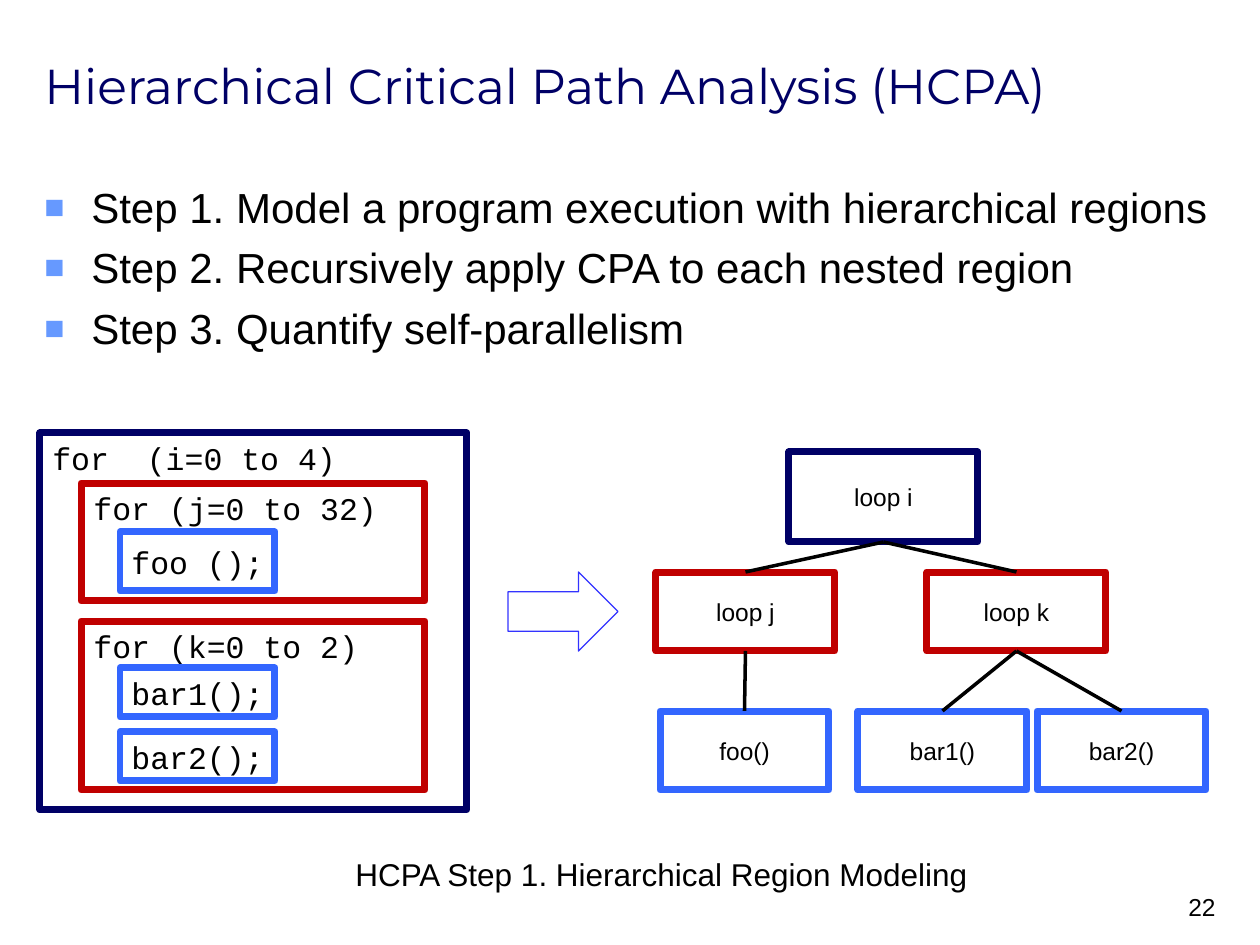
from dataclasses import dataclass

from lxml.etree import SubElement
from pptx import Presentation
from pptx.dml.color import RGBColor
from pptx.enum.shapes import MSO_CONNECTOR as Connector, MSO_SHAPE as Shape
from pptx.enum.text import MSO_ANCHOR as Anchor, PP_ALIGN as Align
from pptx.oxml.ns import qn
from pptx.util import Emu, Pt

PX = 914400 / 126
BOTTOM, TOP = 2, 0


def px(length):
    return Emu(round(length * PX))


@dataclass(frozen=True)
class Theme:
    navy: str = "000066"
    red: str = "C00000"
    blue: str = "3366FF"
    arrow: str = "3333FF"
    bullet: str = "6699FF"
    ink: str = "000000"
    heading_font: str = "Montserrat"
    body_font: str = "Arial"
    code_font: str = "Courier New"
    heading: int = 28
    body: int = 24
    code: int = 18
    small: int = 14
    border: float = 4
    edge: float = 2
    hairline: float = 0.75


def add_bullet(paragraph, color, indent):
    props = paragraph._p.get_or_add_pPr()
    props.set("marL", str(indent))
    props.set("indent", str(-indent))
    bullet_color = SubElement(props, qn("a:buClr"))
    SubElement(bullet_color, qn("a:srgbClr"), val=color)
    SubElement(props, qn("a:buSzPct"), val="80000")
    SubElement(props, qn("a:buFont"), typeface="Arial")
    SubElement(props, qn("a:buChar"), char="■")


def write(frame, text, *, font, size, color, align=Align.LEFT,
          anchor=Anchor.TOP, wrap=True, space=0, bullet=None):
    """Fill a text frame, one paragraph for each line of text."""
    frame.word_wrap = wrap
    frame.vertical_anchor = anchor
    for i, line in enumerate(text.split("\n")):
        paragraph = frame.add_paragraph() if i else frame.paragraphs[0]
        paragraph.alignment = align
        paragraph.space_before = Pt(space)
        if bullet:
            add_bullet(paragraph, bullet, px(47))
        run = paragraph.add_run()
        run.text = line
        run.font.name = font
        run.font.size = Pt(size)
        run.font.color.rgb = RGBColor.from_string(color)


class SlideBuilder:
    def __init__(self, slide, theme):
        self.shapes = slide.shapes
        self.theme = theme

    def label(self, text, bounds, **style):
        area = self.shapes.add_textbox(*map(px, bounds))
        style = {"font": self.theme.body_font, "color": self.theme.ink} | style
        write(area.text_frame, text, **style)

    def outline(self, bounds, color, kind=Shape.RECTANGLE, width=None):
        shape = self.shapes.add_shape(kind, *map(px, bounds))
        shape.shadow.inherit = False
        shape.fill.background()
        shape.line.color.rgb = RGBColor.from_string(color)
        shape.line.width = Pt(width or self.theme.border)
        return shape

    def node(self, text, bounds, color):
        box = self.outline(bounds, color)
        write(box.text_frame, text, font=self.theme.body_font,
              size=self.theme.small, color=self.theme.ink,
              align=Align.CENTER, anchor=Anchor.MIDDLE)
        return box

    def edge(self, parent, child):
        line = self.shapes.add_connector(Connector.STRAIGHT, 0, 0, 0, 0)
        line.begin_connect(parent, BOTTOM)
        line.end_connect(child, TOP)
        line.line.color.rgb = RGBColor.from_string(self.theme.ink)
        line.line.width = Pt(self.theme.edge)
        SubElement(line._element.spPr, qn("a:effectLst"))

    def loop_region(self, header, bounds, color):
        """Outline a loop and put its header in the top left corner."""
        self.outline(bounds, color)
        left, top, width, _ = bounds
        self.label(header, (left, top, min(width, 328), 50),
                   font=self.theme.code_font, size=self.theme.code)

    def call_region(self, call, top, height):
        box = self.outline((120, top, 155, height), self.theme.blue)
        write(box.text_frame, call, font=self.theme.code_font,
              size=self.theme.code, color=self.theme.ink,
              align=Align.CENTER, anchor=Anchor.MIDDLE, wrap=False)


def draw_code(page):
    theme = page.theme
    page.loop_region("for  (i=0 to 4)", (40, 433, 427, 377), theme.navy)
    page.loop_region("for (j=0 to 32)", (81, 483, 344, 118), theme.red)
    page.loop_region("for (k=0 to 2)", (81, 621, 344, 169), theme.red)
    for call, top, height in (("foo ();", 532, 59), ("bar1();", 668, 49),
                              ("bar2();", 732, 49)):
        page.call_region(call, top, height)


def draw_tree(page):
    theme = page.theme
    root = page.node("loop i", (789, 452, 189, 90), theme.navy)
    branches = (("loop j", 656, (("foo()", 660),)),
                ("loop k", 927, (("bar1()", 858), ("bar2()", 1037))))
    for loop, loop_left, calls in branches:
        branch = page.node(loop, (loop_left, 572, 179, 79), theme.red)
        page.edge(root, branch)
        for call, call_left in calls:
            leaf = page.node(call, (call_left, 711, 169, 79), theme.blue)
            page.edge(branch, leaf)


def main():
    deck = Presentation()
    deck.slide_width, deck.slide_height = px(1260), px(945)
    theme = Theme()
    page = SlideBuilder(deck.slides.add_slide(deck.slide_layouts[6]), theme)

    page.label("Hierarchical Critical Path Analysis (HCPA)", (32, 6, 1201, 158),
               font=theme.heading_font, size=theme.heading, color=theme.navy,
               anchor=Anchor.MIDDLE)
    page.label("Step 1. Model a program execution with hierarchical regions\n"
               "Step 2. Recursively apply CPA to each nested region\n"
               "Step 3. Quantify self-parallelism", (32, 175, 1201, 307),
               size=theme.body, space=5.8, bullet=theme.bullet)
    draw_code(page)
    page.outline((508, 572, 110, 79), theme.arrow, Shape.RIGHT_ARROW,
                 theme.hairline)
    draw_tree(page)
    page.label("HCPA Step 1. Hierarchical Region Modeling", (343, 849, 644, 50),
               size=theme.code, wrap=False)
    page.label("22", (966, 886, 262, 63), size=theme.small, align=Align.RIGHT)
    deck.save("out.pptx")


if __name__ == "__main__":
    main()
